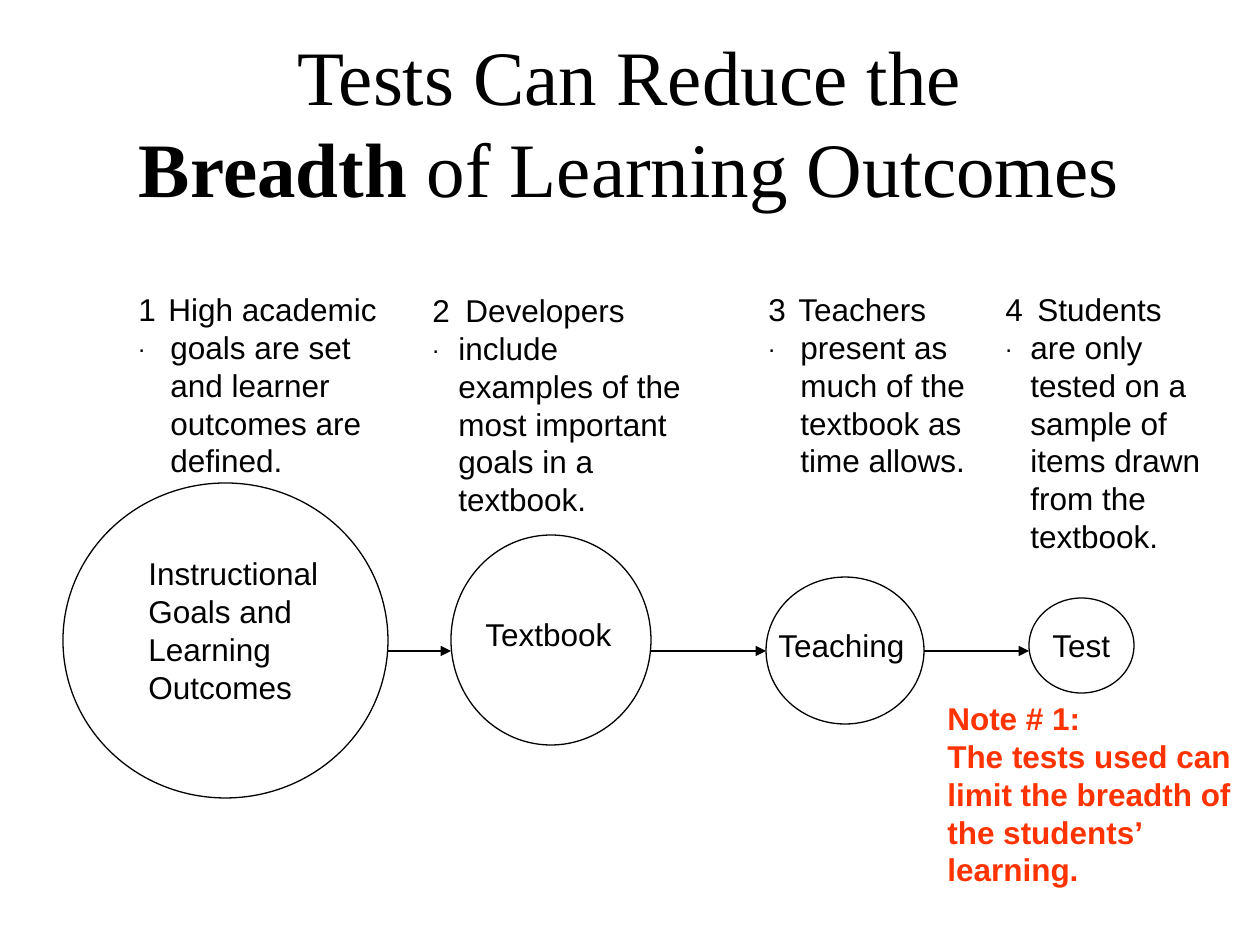
from itertools import pairwise

from lxml import etree
from pptx import Presentation
from pptx.dml.color import RGBColor
from pptx.enum import shapes, text
from pptx.oxml import ns
from pptx.util import Pt

PX = 914400 / 126
COLORS = {"ink": "000000", "note": "FF3300"}
ARROW_Y = 651

STAGES = [
    ((63, 483, 325, 315), (73, 65, 262, 165), "Instructional Goals and Learning Outcomes"),
    ((451, 535, 200, 210), (22, 74, 189, 63), "Textbook"),
    ((766, 577, 158, 147), (0, 43, 158, 50), "Teaching"),
    ((1029, 598, 105, 95), (11, 22, 116, 50), "Test"),
]
STEPS = [
    ((95, 284, 315, 204), 31, -2,
     "High academic goals are set and learner outcomes are defined."),
    ((383, 285, 331, 202), 37, 7,
     "Developers include examples of the most important goals in a textbook."),
    ((725, 284, 262, 202), 31, -2,
     "Teachers present as much of the textbook as time allows."),
    ((955, 284, 273, 239), 38, 7,
     "Students are only tested on a sample of items drawn from the textbook."),
]


def px(n):
    return round(n * PX)


def rgb(name):
    return RGBColor.from_string(COLORS[name])


def add_run(p, words, size=18, font="Arial", color="ink", bold=False):
    r = p.add_run()
    r.text = words
    r.font.size = Pt(size)
    r.font.name = font
    r.font.bold = bold
    r.font.color.rgb = rgb(color)
    return r


def add_text(s, box, words="", anchor=text.MSO_ANCHOR.TOP, **fmt):
    tf = s.shapes.add_textbox(*map(px, box)).text_frame
    tf.word_wrap = True
    tf.vertical_anchor = anchor
    for i, line in enumerate(words.split("\n") if words else []):
        p = tf.add_paragraph() if i else tf.paragraphs[0]
        add_run(p, line, **fmt)
    return tf


def add_title(s, box):
    tf = add_text(s, box, anchor=text.MSO_ANCHOR.MIDDLE)
    p = tf.paragraphs[0]
    p.alignment = text.PP_ALIGN.CENTER
    fmt = dict(size=44, font="Times New Roman")
    add_run(p, "Tests Can Reduce the", **fmt)
    p.add_line_break()
    add_run(p, "Breadth", bold=True, **fmt)
    add_run(p, " of Learning Outcomes", **fmt)


def add_stage(s, box, label_box, label):
    left, top, _, _ = box
    dx, dy, w, h = label_box
    sp = s.shapes.add_shape(shapes.MSO_SHAPE.OVAL, *map(px, box))
    sp.shadow.inherit = False
    sp.fill.background()
    sp.line.color.rgb = rgb("ink")
    sp.line.width = Pt(0.75)
    add_text(s, (left + dx, top + dy, w, h), label)


def add_step(s, box, number, number_dx, first_indent, words):
    left, top, _, _ = box
    p = add_text(s, box, words).paragraphs[0]
    pPr = p._p.get_or_add_pPr()
    pPr.set("marL", str(px(63)))
    pPr.set("indent", str(px(first_indent)))
    p = add_text(s, (left + number_dx, top, 48, 50), str(number)).paragraphs[0]
    add_run(p, ".", size=14)


def add_arrow(s, x1, x2, y):
    c = s.shapes.add_connector(
        shapes.MSO_CONNECTOR.STRAIGHT, px(x1), px(y), px(x2), px(y))
    c.line.color.rgb = rgb("ink")
    c.line.width = Pt(0.75)
    etree.SubElement(c.line._get_or_add_ln(), ns.qn("a:tailEnd"), type="triangle")
    etree.SubElement(c._element.spPr, ns.qn("a:effectLst"))


def add_note(s, box):
    add_text(s, box,
             "Note # 1:\nThe tests used can limit the breadth of the students’ learning.",
             color="note", bold=True)


def main():
    prs = Presentation()
    prs.slide_width, prs.slide_height = px(1260), px(945)
    s = prs.slides.add_slide(prs.slide_layouts[6])
    add_title(s, (94, 21, 1071, 199))
    for stage in STAGES:
        add_stage(s, *stage)
    for number, (box, *step) in enumerate(STEPS, 1):
        add_step(s, box, number, *step)
    for (a, *_), (b, *_) in pairwise(STAGES):
        add_arrow(s, a[0] + a[2], b[0], ARROW_Y)
    add_note(s, (935, 693, 325, 204))
    prs.save("out.pptx")


if __name__ == "__main__":
    main()
